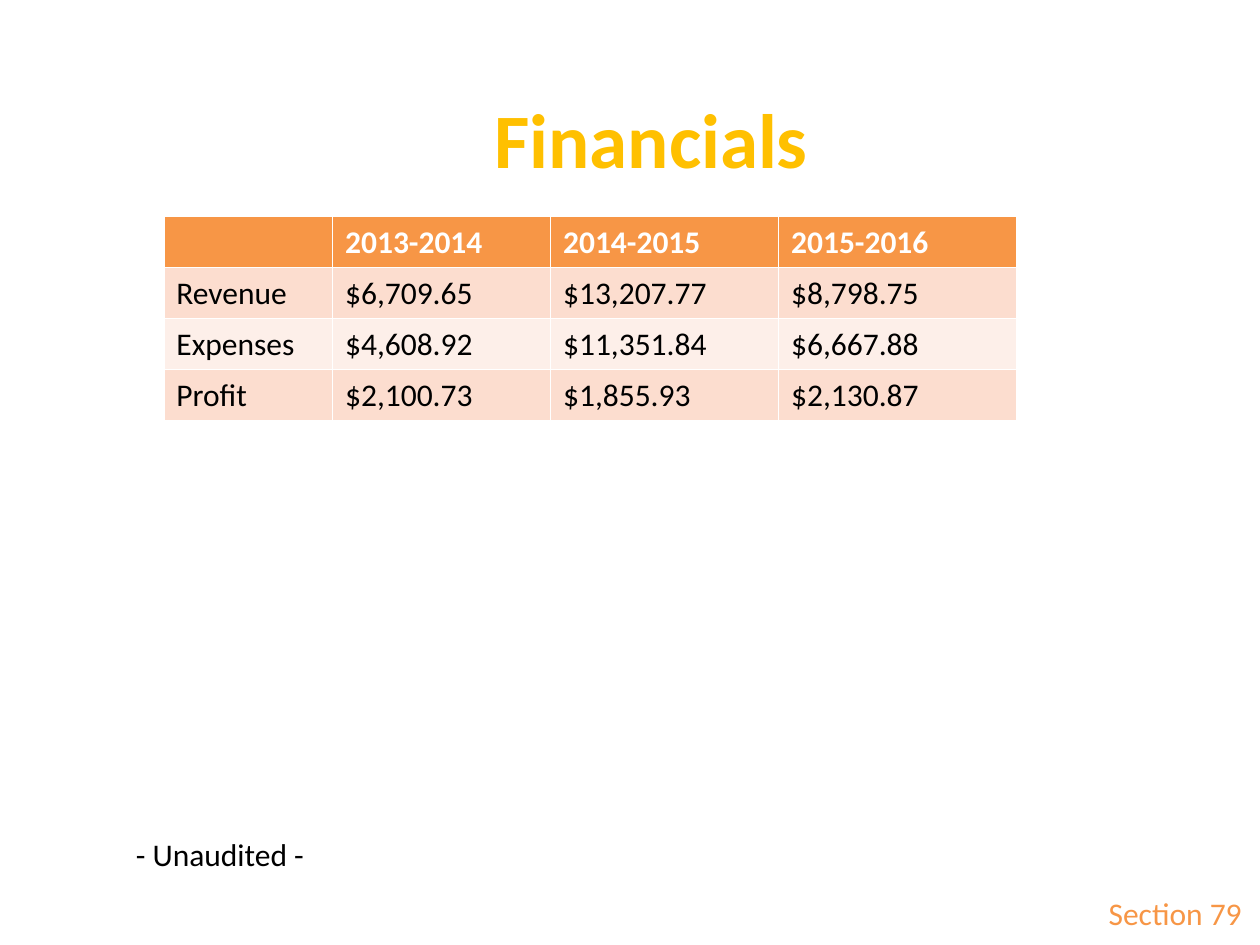
"""Build the Financials slide with a three-year summary table."""
import pptx
import pptx.dml.color
import pptx.enum.text
import pptx.util
from pptx.util import Inches

ORANGE = pptx.dml.color.RGBColor(0xF7, 0x96, 0x46)
GOLD = pptx.dml.color.RGBColor(0xFF, 0xC0, 0x00)
WHITE = pptx.dml.color.RGBColor(0xFF, 0xFF, 0xFF)
BLACK = pptx.dml.color.RGBColor(0x00, 0x00, 0x00)
DARK_BAND = pptx.dml.color.RGBColor(0xFC, 0xDD, 0xCF)
LIGHT_BAND = pptx.dml.color.RGBColor(0xFD, 0xEF, 0xE9)


def write_text(text_frame, text, color, size=18, bold=False):
    text_frame.text = text
    for run in text_frame.paragraphs[0].runs:
        run.font.name = "Calibri"
        run.font.size = pptx.util.Pt(size)
        run.font.bold = bold
        run.font.color.rgb = color


def add_label(slide, text, color, left, top, width):
    label = slide.shapes.add_textbox(Inches(left), Inches(top), Inches(width), Inches(0.4))
    label.text_frame.word_wrap = True
    label.text_frame.auto_size = pptx.enum.text.MSO_AUTO_SIZE.SHAPE_TO_FIT_TEXT
    write_text(label.text_frame, text, color)


presentation = pptx.Presentation()
presentation.slide_width = Inches(10)
presentation.slide_height = Inches(7.5)
slide = presentation.slides.add_slide(presentation.slide_layouts[5])

add_label(slide, "Section 79", ORANGE, 8.7, 7.05, 1.38)

title = slide.shapes.title
title.left, title.top = Inches(0.67), Inches(0.47)
title.width, title.height = Inches(9), Inches(1.25)
title.text_frame.vertical_anchor = pptx.enum.text.MSO_ANCHOR.MIDDLE
write_text(title.text_frame, "Financials", GOLD, size=44, bold=True)
title.text_frame.paragraphs[0].alignment = pptx.enum.text.PP_ALIGN.CENTER

financials = [
    ["", "2013-2014", "2014-2015", "2015-2016"],
    ["Revenue", "$6,709.65", "$13,207.77", "$8,798.75"],
    ["Expenses", "$4,608.92", "$11,351.84", "$6,667.88"],
    ["Profit", "$2,100.73", "$1,855.93", "$2,130.87"],
]
row_fills = [ORANGE, DARK_BAND, LIGHT_BAND, DARK_BAND]
column_widths = [1.34, 1.73, 1.81, 1.89]

table = slide.shapes.add_table(
    len(financials), len(column_widths),
    Inches(1.3), Inches(1.72), Inches(sum(column_widths)), Inches(1.62),
).table
for column, width in zip(table.columns, column_widths):
    column.width = Inches(width)

for row_index, (values, fill) in enumerate(zip(financials, row_fills)):
    is_header = row_index == 0
    for column_index, value in enumerate(values):
        cell = table.cell(row_index, column_index)
        cell.fill.solid()
        cell.fill.fore_color.rgb = fill
        write_text(cell.text_frame, value, WHITE if is_header else BLACK, bold=is_header)

add_label(slide, "- Unaudited -", BLACK, 0.98, 6.58, 5.12)

presentation.save("out.pptx")
